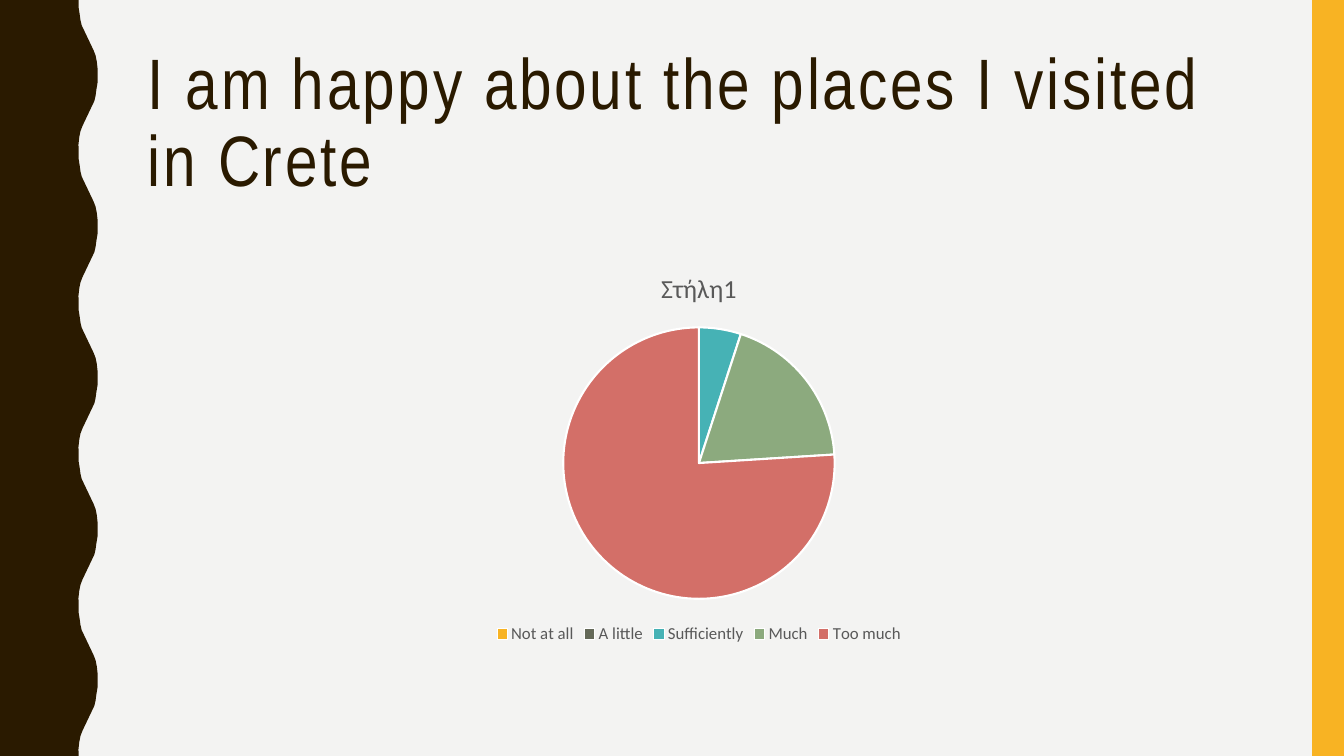
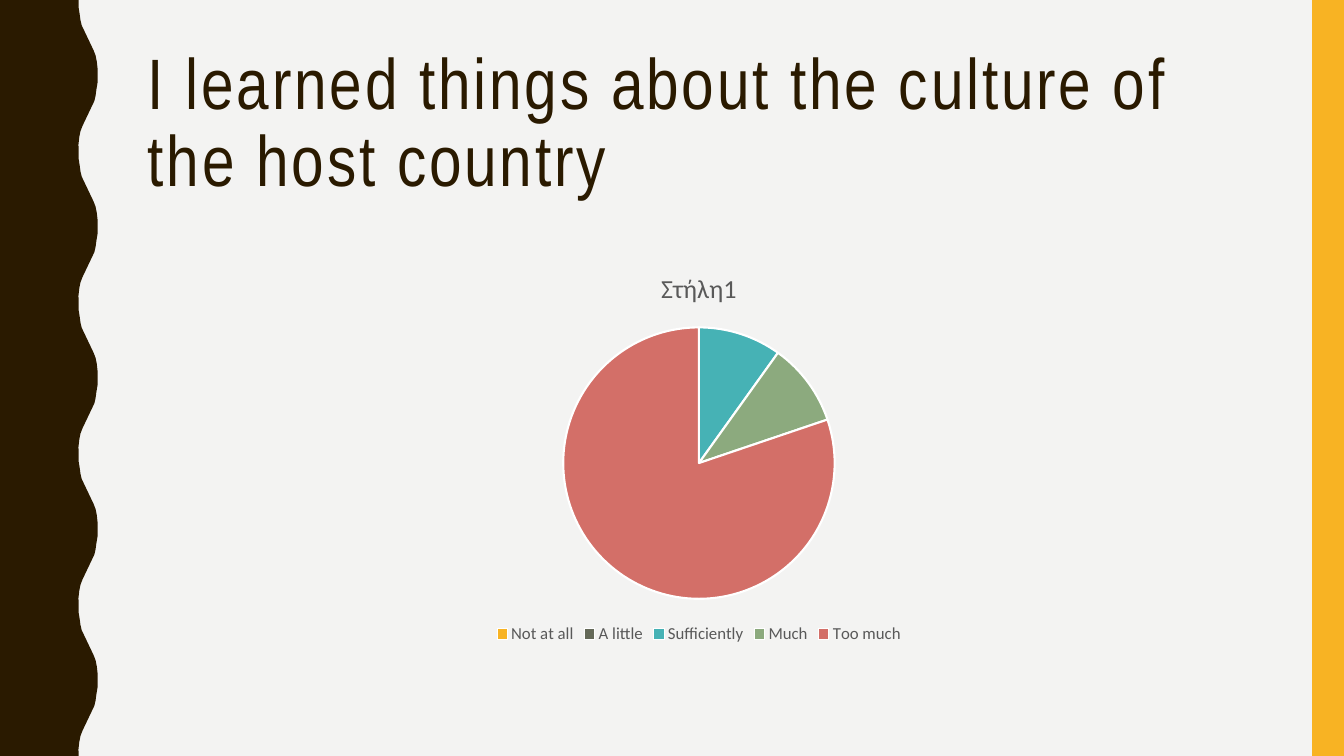
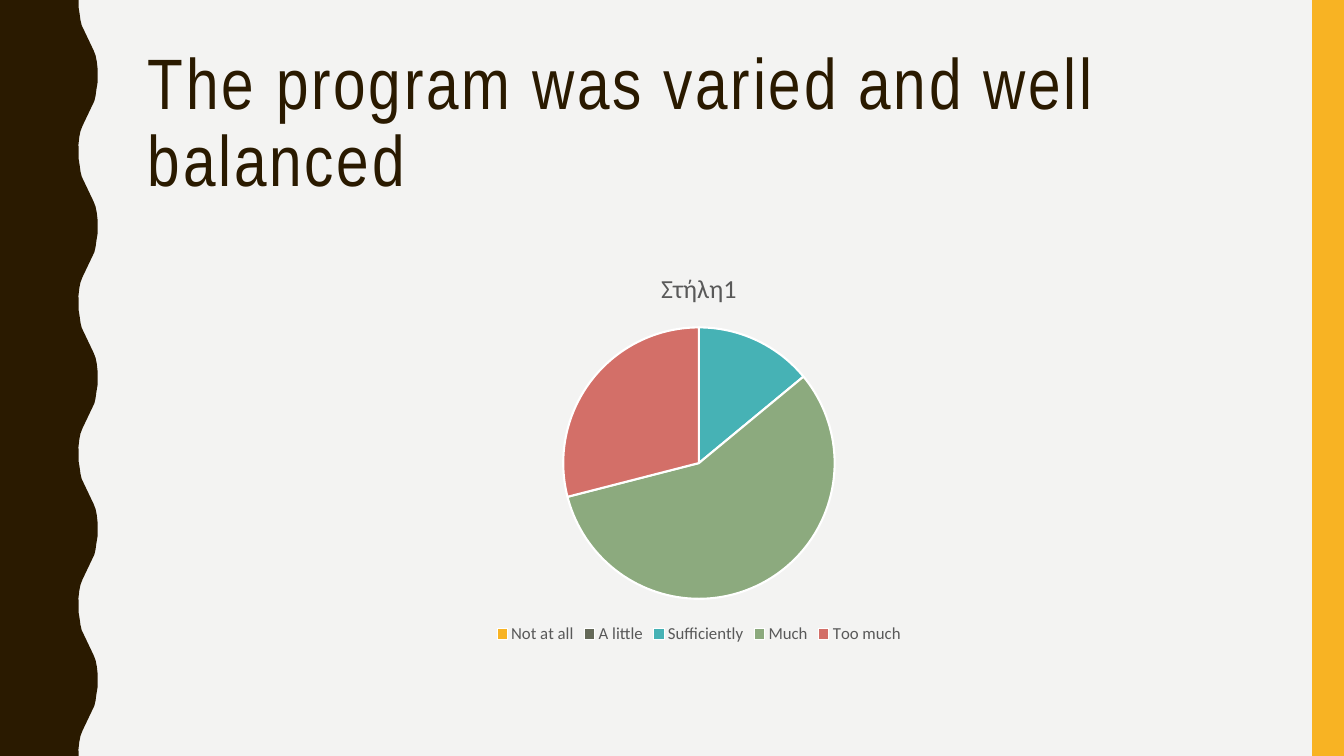
from dataclasses import dataclass

import pptx
import pptx.chart.data
import pptx.dml.color
import pptx.enum.chart
import pptx.enum.shapes
import pptx.enum.text
import pptx.util

Cm = pptx.util.Cm
Pt = pptx.util.Pt
RGB = pptx.dml.color.RGBColor.from_string


@dataclass(frozen=True)
class Theme:
    background: str = "F3F3F2"
    dark: str = "2A1A00"
    accent: str = "F8B323"
    chart_text: str = "595959"
    slice_border: str = "FFFFFF"
    slices: tuple[str, ...] = ("F8B323", "656A59", "46B2B5", "8CAA7E", "D36F68")
    title_font: str = "Arial Narrow"
    chart_font: str = "Calibri"
    title_size: float = 51
    title_spacing: float = 2
    chart_title_size: float = 18.6
    legend_size: float = 12
    border_width: float = 1.5


@dataclass(frozen=True)
class Survey:
    question: str
    shares: tuple[int, ...]


THEME = Theme()
WIDTH, HEIGHT = 33.87, 19.05
BAND_WIDTH = 0.8
MARGIN, CONTENT_WIDTH = 3.48, 28.27
HALF_WAVES = 10
HALF_WAVE_HEIGHT = HEIGHT / HALF_WAVES
TROUGH, CREST = 1.98, 2.46
HALF_WAVE = (
    (TROUGH, 0), (1.98, 0.18), (2.01, 0.36), (2.03, 0.51), (2.06, 0.64),
    (2.36, 1.27), (2.41, 1.4), (2.44, 1.55), (2.46, 1.73),
)
SERIES = "Στήλη1"
ANSWERS = ("Not at all", "A little", "Sufficiently", "Much", "Too much")
SURVEYS = (
    Survey("I am happy about the places I visited in Crete", (0, 0, 5, 19, 76)),
    Survey("I learned things about the culture of the host country", (0, 0, 10, 10, 81)),
    Survey("The program was varied and well balanced", (0, 0, 14, 57, 29)),
)


def paint(sp, color: str) -> None:
    sp.shadow.inherit = False
    sp.fill.solid()
    sp.fill.fore_color.rgb = RGB(color)
    sp.line.fill.background()


def style_font(font, name: str, size: float, color: str) -> None:
    font.name = name
    font.size = Pt(size)
    font.bold = False
    font.color.rgb = RGB(color)


def add_wave(s) -> None:
    points = [
        (TROUGH + CREST - x if half % 2 else x, half * HALF_WAVE_HEIGHT + y)
        for half in range(HALF_WAVES)
        for x, y in HALF_WAVE
    ]
    points += [(TROUGH, HEIGHT), (0, HEIGHT)]
    builder = s.shapes.build_freeform(0, 0)
    builder.add_line_segments([(Cm(x), Cm(y)) for x, y in points], close=True)
    paint(builder.convert_to_shape(), THEME.dark)


def add_band(s) -> None:
    sp = s.shapes.add_shape(
        pptx.enum.shapes.MSO_SHAPE.RECTANGLE,
        Cm(WIDTH - BAND_WIDTH), 0, Cm(BAND_WIDTH), Cm(HEIGHT),
    )
    paint(sp, THEME.accent)


def add_title(s, text: str) -> None:
    tf = s.shapes.add_textbox(Cm(MARGIN), Cm(1.07), Cm(CONTENT_WIDTH), Cm(4.14)).text_frame
    tf.word_wrap = True
    tf.vertical_anchor = pptx.enum.text.MSO_ANCHOR.TOP
    tf.text = text
    p = tf.paragraphs[0]
    p.line_spacing = 0.9
    r = p.runs[0]
    style_font(r.font, THEME.title_font, THEME.title_size, THEME.dark)
    r.font._element.set("spc", str(int(THEME.title_spacing * 100)))


def add_pie(s, shares: tuple[int, ...]) -> None:
    data = pptx.chart.data.CategoryChartData()
    data.categories = ANSWERS
    data.add_series(SERIES, shares)
    chart = s.shapes.add_chart(
        pptx.enum.chart.XL_CHART_TYPE.PIE,
        Cm(MARGIN), Cm(6.35), Cm(CONTENT_WIDTH), Cm(9.98), data,
    ).chart
    style_font(chart.font, THEME.chart_font, THEME.legend_size, THEME.chart_text)

    chart.has_title = True
    tf = chart.chart_title.text_frame
    tf.text = SERIES
    style_font(tf.paragraphs[0].runs[0].font, THEME.chart_font,
               THEME.chart_title_size, THEME.chart_text)
    chart.chart_title.include_in_layout = False

    chart.has_legend = True
    chart.legend.position = pptx.enum.chart.XL_LEGEND_POSITION.BOTTOM
    chart.legend.include_in_layout = False
    style_font(chart.legend.font, THEME.chart_font, THEME.legend_size, THEME.chart_text)

    plot = chart.plots[0]
    plot.vary_by_categories = True
    for i, color in enumerate(THEME.slices):
        form = plot.series[0].points[i].format
        form.fill.solid()
        form.fill.fore_color.rgb = RGB(color)
        form.line.color.rgb = RGB(THEME.slice_border)
        form.line.width = Pt(THEME.border_width)


def add_survey_slide(prs, survey: Survey) -> None:
    s = prs.slides.add_slide(prs.slide_layouts[6])
    add_wave(s)
    add_band(s)
    add_title(s, survey.question)
    add_pie(s, survey.shares)


def main() -> None:
    prs = pptx.Presentation()
    prs.slide_width, prs.slide_height = Cm(WIDTH), Cm(HEIGHT)
    fill = prs.slide_master.background.fill
    fill.solid()
    fill.fore_color.rgb = RGB(THEME.background)
    for survey in SURVEYS:
        add_survey_slide(prs, survey)
    prs.save("out.pptx")


if __name__ == "__main__":
    main()
